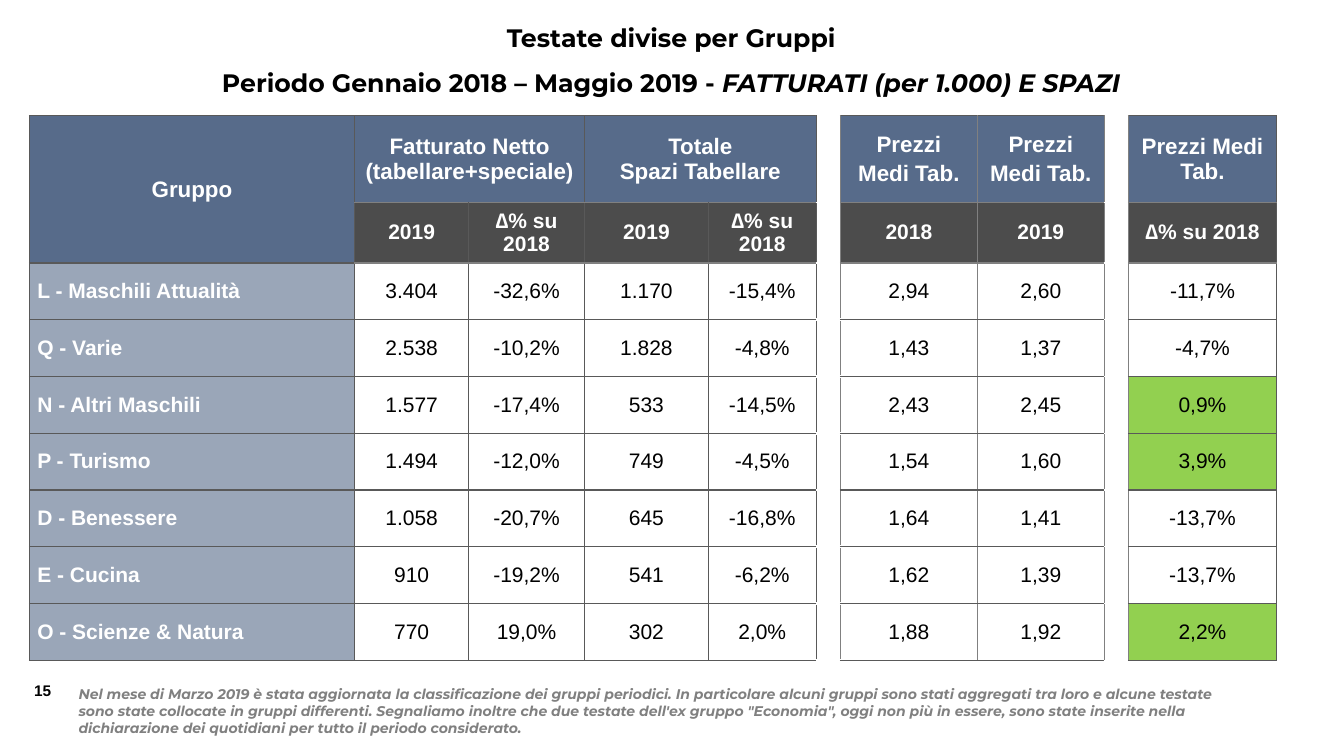
from lxml.etree import SubElement
from pptx import Presentation
from pptx.dml.color import RGBColor
from pptx.enum.shapes import MSO_SHAPE
from pptx.enum.text import MSO_ANCHOR, PP_ALIGN
from pptx.oxml import parse_xml
from pptx.oxml.ns import nsdecls, qn
from pptx.util import Cm, Pt

BLUE, BLACK, WHITE, GREEN = "576B8A", "000000", "FFFFFF", "92D050"
DARK_GREY, GREY = "595959", "808080"
COLUMN_WIDTHS = [8.2, 2.87, 2.92, 3.12, 2.72, 0.61, 3.45, 3.2, 0.61, 3.73]
ROW_HEIGHTS = [2.18, 1.52] + [1.43] * 7
GAP_COLUMNS = (5, 8)
HEADINGS = {
    0: ["Gruppo"],
    1: ["Fatturato Netto (tabellare+speciale)"],
    3: ["Totale", "Spazi Tabellare"],
    6: ["Prezzi", "Medi Tab."],
    7: ["Prezzi", "Medi Tab."],
    9: ["Prezzi Medi Tab."],
}
SUBHEADINGS = ["", "2019", "∆% su 2018", "2019", "∆% su 2018", "", "2018", "2019", "", "∆% su 2018"]
GROUPS = [
    ["L - Maschili Attualità", "3.404", "-32,6%", "1.170", "-15,4%", "", "2,94", "2,60", "", "-11,7%"],
    ["Q - Varie", "2.538", "-10,2%", "1.828", "-4,8%", "", "1,43", "1,37", "", "-4,7%"],
    ["N - Altri Maschili", "1.577", "-17,4%", "533", "-14,5%", "", "2,43", "2,45", "", "0,9%"],
    ["P - Turismo", "1.494", "-12,0%", "749", "-4,5%", "", "1,54", "1,60", "", "3,9%"],
    ["D - Benessere", "1.058", "-20,7%", "645", "-16,8%", "", "1,64", "1,41", "", "-13,7%"],
    ["E - Cucina", "910", "-19,2%", "541", "-6,2%", "", "1,62", "1,39", "", "-13,7%"],
    ["O - Scienze & Natura", "770", "19,0%", "302", "2,0%", "", "1,88", "1,92", "", "2,2%"],
]
FOOTNOTE = (
    "Nel mese di Marzo 2019 è stata aggiornata la classificazione dei gruppi periodici. "
    "In particolare alcuni gruppi sono stati aggregati tra loro e alcune testate sono state "
    "collocate in gruppi differenti. Segnaliamo inoltre che due testate dell'ex gruppo "
    "\"Economia\", oggi non più in essere, sono state inserite nella dichiarazione dei "
    "quotidiani per tutto il periodo considerato."
)


def color(value):
    return RGBColor.from_string(value)


class GroupSlide:
    """Draws titles, notes and the table of groups on one slide."""

    title_font, table_font = "Montserrat", "Arial"

    def __init__(self, presentation):
        self.slide = presentation.slides.add_slide(presentation.slide_layouts[6])

    def style(self, paragraph, size, ink, font, bold=True, italic=None):
        paragraph.font.name = font
        paragraph.font.size = Pt(size)
        paragraph.font.bold = bold
        paragraph.font.italic = italic
        paragraph.font.color.rgb = color(ink)

    def title(self, left, top, width, height, lines):
        frame = self.slide.shapes.add_textbox(Cm(left), Cm(top), Cm(width), Cm(height)).text_frame
        frame.word_wrap = True
        for index, (text, emphasis) in enumerate(lines):
            paragraph = frame.add_paragraph() if index else frame.paragraphs[0]
            paragraph.alignment = PP_ALIGN.CENTER
            paragraph.line_spacing = 1.5
            self.style(paragraph, 18, BLACK, self.title_font)
            paragraph.add_run().text = text
            if emphasis:
                run = paragraph.add_run()
                run.text = emphasis
                run.font.italic = True

    def page_number(self, left, top, width, height, number):
        frame = self.slide.shapes.add_textbox(Cm(left), Cm(top), Cm(width), Cm(height)).text_frame
        frame.text = number
        self.style(frame.paragraphs[0], 11, BLACK, self.table_font)

    def footnote(self, left, top, width, height, text):
        shape = self.slide.shapes.add_shape(
            MSO_SHAPE.RECTANGLE, Cm(left), Cm(top), Cm(width), Cm(height))
        shape.shadow.inherit = False
        shape.fill.solid()
        shape.fill.fore_color.rgb = color(WHITE)
        shape.line.fill.background()
        frame = shape.text_frame
        frame.word_wrap = True
        frame.vertical_anchor = MSO_ANCHOR.TOP
        frame.text = text
        frame.paragraphs[0].alignment = PP_ALIGN.LEFT
        self.style(frame.paragraphs[0], 10, GREY, self.title_font, italic=True)

    def fill_cell(self, cell, value, opacity=100):
        cell.fill.solid()
        cell.fill.fore_color.rgb = color(value)
        if opacity < 100:
            shade = cell.fill._xPr.find(qn("a:solidFill")).find(qn("a:srgbClr"))
            SubElement(shade, qn("a:alpha")).set("val", str(opacity * 1000))

    def border_cell(self, cell, row, column):
        def horizontal(edge):
            if column in GAP_COLUMNS:
                return WHITE, 2.25 if column == 5 and edge > 2 else 1
            return GREY if column and edge in (1, 2) else DARK_GREY, 1

        def vertical(edge):
            return GREY if 6 <= edge <= 9 else DARK_GREY, 1

        sides = {"L": vertical(column), "R": vertical(column + 1),
                 "T": horizontal(row), "B": horizontal(row + 1)}
        properties = cell._tc.get_or_add_tcPr()
        for index, (side, (ink, width)) in enumerate(sides.items()):
            properties.insert(index, parse_xml(
                f'<a:ln{side} {nsdecls("a")} w="{Pt(width)}"><a:solidFill>'
                f'<a:srgbClr val="{ink}"/></a:solidFill></a:ln{side}>'))

    def write_cell(self, cell, lines, size, ink, bold, centered=True, space=0):
        cell.vertical_anchor = MSO_ANCHOR.MIDDLE
        for index, text in enumerate(lines):
            frame = cell.text_frame
            paragraph = frame.add_paragraph() if index else frame.paragraphs[0]
            paragraph.text = text
            paragraph.alignment = PP_ALIGN.CENTER if centered else PP_ALIGN.LEFT
            if index and space:
                paragraph.space_before = Pt(space)
            self.style(paragraph, size, ink, self.table_font, bold)

    def body_cell(self, cell, column, text):
        label = column == 0
        cell.margin_left = Cm(0.2 if label else 0)
        cell.margin_right = cell.margin_top = cell.margin_bottom = Cm(0)
        self.write_cell(cell, [text], 15, WHITE if label else BLACK, label, not label)
        if label:
            self.fill_cell(cell, BLUE, 60)
        else:
            rising = column == 9 and not text.startswith("-")
            self.fill_cell(cell, GREEN if rising else WHITE)

    def group_table(self, left, top):
        table = self.slide.shapes.add_table(
            len(ROW_HEIGHTS), len(COLUMN_WIDTHS), Cm(left), Cm(top),
            Cm(sum(COLUMN_WIDTHS)), Cm(sum(ROW_HEIGHTS))).table
        table.first_row = table.horz_banding = False
        for column, width in zip(table.columns, COLUMN_WIDTHS):
            column.width = Cm(width)
        for row, height in enumerate(ROW_HEIGHTS):
            table.rows[row].height = Cm(height)
            for column in range(len(COLUMN_WIDTHS)):
                cell = table.cell(row, column)
                if column in GAP_COLUMNS:
                    self.fill_cell(cell, WHITE)
                elif row == 0 or column == 0 and row == 1:
                    self.fill_cell(cell, BLUE)
                    if row == 0 and column in HEADINGS:
                        self.write_cell(cell, HEADINGS[column], 16, WHITE, True,
                                        space=3.2 if column > 5 else 0)
                elif row == 1:
                    self.fill_cell(cell, BLACK, 70)
                    self.write_cell(cell, [SUBHEADINGS[column]], 15, WHITE, True)
                else:
                    self.body_cell(cell, column, GROUPS[row - 2][column])
                self.border_cell(cell, row, column)
        table.cell(0, 0).merge(table.cell(1, 0))
        for column in (1, 3):
            table.cell(0, column).merge(table.cell(0, column + 1))


def main():
    presentation = Presentation()
    presentation.slide_width, presentation.slide_height = Cm(33.87), Cm(19.05)
    slide = GroupSlide(presentation)
    slide.page_number(0.61, 17.04, 1.07, 0.74, "15")
    slide.title(2.82, 0.05, 28.19, 2.72, [
        ("Testate divise per Gruppi", ""),
        ("Periodo Gennaio 2018 – Maggio 2019 - ", "FATTURATI (per 1.000) E SPAZI"),
    ])
    slide.group_table(0.74, 2.92)
    slide.footnote(1.73, 17.15, 29.69, 1.57, FOOTNOTE)
    presentation.save("out.pptx")


if __name__ == "__main__":
    main()
